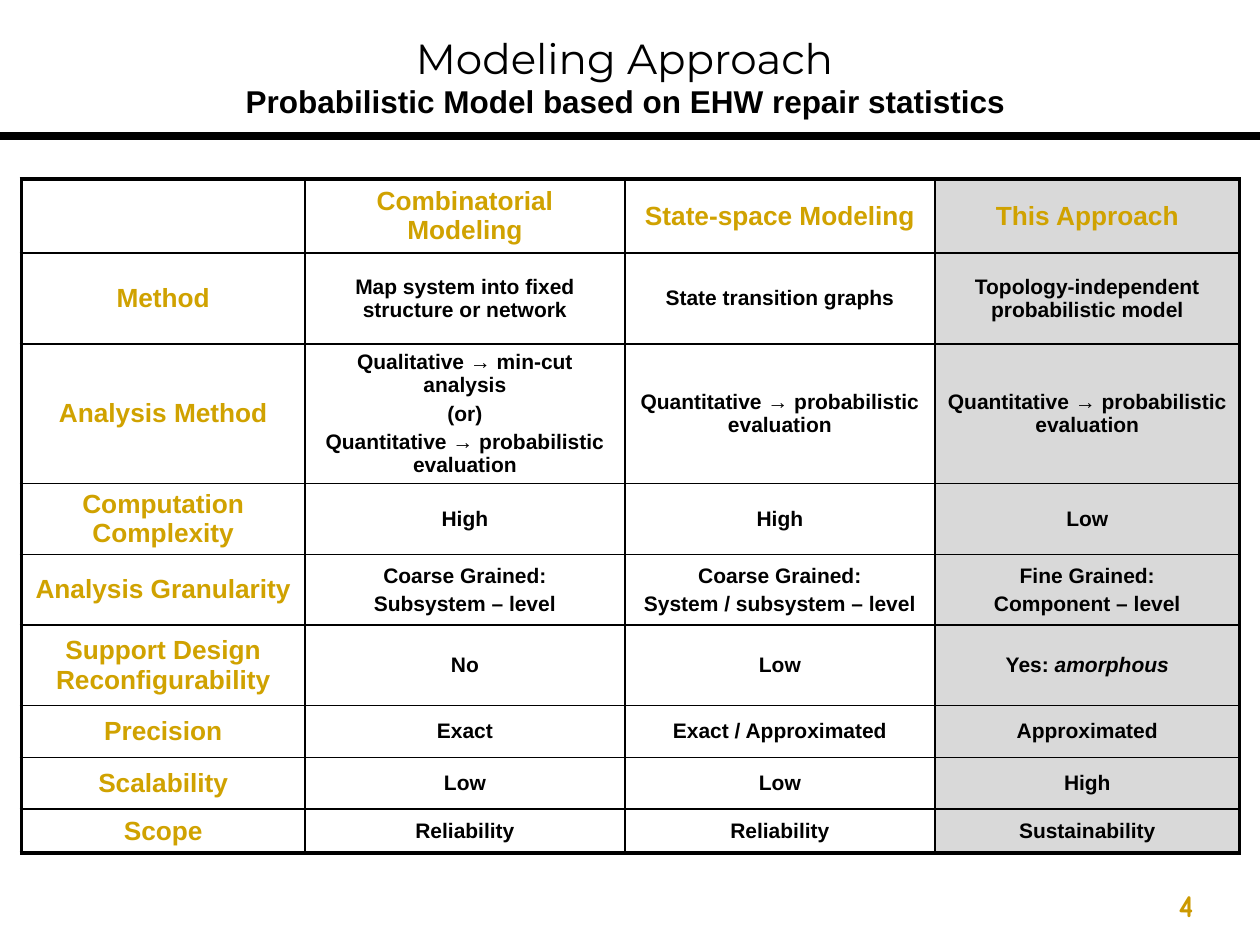
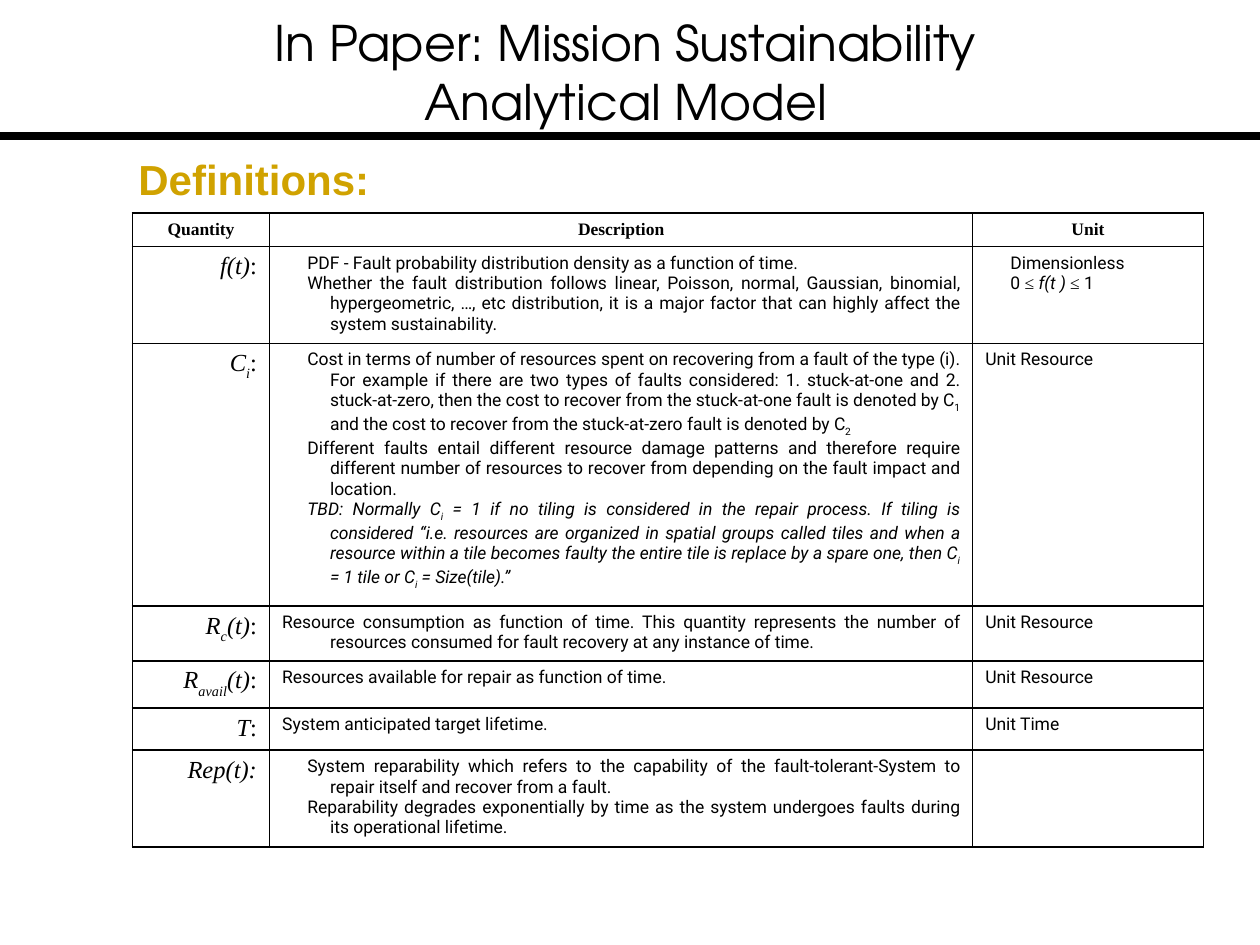
from dataclasses import dataclass, replace
from lxml.etree import SubElement
from pptx import Presentation
from pptx.dml.color import RGBColor
from pptx.enum.shapes import MSO_CONNECTOR
from pptx.enum.text import MSO_ANCHOR, MSO_AUTO_SIZE, PP_ALIGN
from pptx.oxml.ns import qn
from pptx.util import Inches, Pt

COLORS = {"ink": "000000", "gold": "D0A200", "number": "CC9900", "shade": "D9D9D9"}
SERIF = "Times New Roman"
COLUMNS, ROWS = 100, 75  # page grid
MARKS = {"*": "italic", "_": "subscript", "~": "serif"}  # toggles in cell text


@dataclass(frozen=True)
class TextStyle:
    font: str
    size: float
    color: str = "ink"
    bold: bool = False
    align: PP_ALIGN = PP_ALIGN.LEFT
    anchor: MSO_ANCHOR = MSO_ANCHOR.TOP
    gap: float = 0  # points between paragraphs
    hanging: float = 0  # inches


TITLE = TextStyle("Montserrat", 24, align=PP_ALIGN.CENTER, anchor=MSO_ANCHOR.MIDDLE)
SUBTITLE = replace(TITLE, font="Arial", size=18, bold=True)
LONG_TITLE = replace(TITLE, font="TeX Gyre Adventor", size=28)
VALUE = replace(SUBTITLE, size=12, gap=2.7)
LABEL = replace(VALUE, size=15, color="gold")
SECTION = TextStyle("Arial", 24, "gold", bold=True)
NUMBER = TextStyle("Comic Neue", 18, "number", bold=True, align=PP_ALIGN.RIGHT)
HEADER = replace(SUBTITLE, font=SERIF, size=10)
SYMBOL = TextStyle(SERIF, 14, align=PP_ALIGN.RIGHT)
UNIT = TextStyle("Roboto", 10, hanging=0.38)
DESCRIPTION = replace(UNIT, align=PP_ALIGN.JUSTIFY)


def split_spans(markup):
    """Yield (text, active marks) for each stretch between toggles."""
    active, text = set(), ""
    for letter in markup:
        if letter in MARKS:
            if text:
                yield text, set(active)
            active ^= {MARKS[letter]}
            text = ""
        else:
            text += letter
    if text:
        yield text, active


class SlideBuilder:
    def __init__(self):
        self.deck = Presentation()
        self.deck.slide_width, self.deck.slide_height = Inches(10), Inches(7.5)
        self.page = None

    def across(self, columns):
        return round(self.deck.slide_width * columns / COLUMNS)

    def down(self, rows):
        return round(self.deck.slide_height * rows / ROWS)

    def area(self, left, top, width, height):
        return self.across(left), self.down(top), self.across(width), self.down(height)

    def format_font(self, font, style):
        font.name, font.size, font.bold = style.font, Pt(style.size), style.bold
        font.color.rgb = RGBColor.from_string(COLORS[style.color])

    def fill_frame(self, frame, paragraphs, style):
        """Fill a frame with marked-up paragraphs."""
        for index, markup in enumerate(paragraphs):
            para = frame.add_paragraph() if index else frame.paragraphs[0]
            para.alignment = style.align
            if index and style.gap:
                para.space_before = Pt(style.gap)
            if style.hanging:
                # cells with several paragraphs start further in
                first_line = 0.18 if len(paragraphs) > 1 else style.hanging
                properties = para._p.get_or_add_pPr()
                properties.set("marL", str(Inches(style.hanging)))
                properties.set("indent", str(-Inches(first_line)))
            for text, marks in split_spans(markup):
                span = para.add_run()
                span.text = text
                self.format_font(span.font, style)
                span.font.italic = "italic" in marks
                if "serif" in marks:
                    span.font.name = SERIF
                if "subscript" in marks:
                    span._r.get_or_add_rPr().set("baseline", "-30000")

    def add_page(self):
        """Start a title-only page with the heavy rule under its title."""
        self.page = self.deck.slides.add_slide(self.deck.slide_layouts[5])
        height = self.down(10.8)
        rule = self.page.shapes.add_connector(
            MSO_CONNECTOR.STRAIGHT, 0, height, self.deck.slide_width, height)
        rule.line.color.rgb = RGBColor.from_string(COLORS["ink"])
        rule.line.width = Pt(4.5)
        SubElement(rule._element.spPr, qn("a:effectLst"))

    def add_title(self, text, place, *styles):
        """Give each run its style; the last style covers the rest."""
        title = self.page.shapes.title
        title.left, title.top, title.width, title.height = self.area(*place)
        frame = title.text_frame
        frame.auto_size = MSO_AUTO_SIZE.NONE
        frame.vertical_anchor = MSO_ANCHOR.MIDDLE
        frame.text = text
        para = frame.paragraphs[0]
        para.alignment = PP_ALIGN.CENTER
        for index, span in enumerate(para.runs):
            self.format_font(span.font, styles[min(index, len(styles) - 1)])

    def add_text(self, text, place, style, line_spacing=1.0):
        frame = self.page.shapes.add_textbox(*self.area(*place)).text_frame
        frame.word_wrap = True
        self.fill_frame(frame, [text], style)
        frame.paragraphs[0].line_spacing = line_spacing

    def add_border(self, cell, side, width):
        line = SubElement(cell._tc.get_or_add_tcPr(), qn(f"a:ln{side}"), w=str(Pt(width)))
        fill = SubElement(line, qn("a:solidFill"))
        SubElement(fill, qn("a:srgbClr"), val=COLORS["ink"])

    def add_table(self, left, top, widths, heights, rows, style_for, frame_width=1,
                  shaded_column=None):
        place = self.area(left, top, sum(widths), sum(heights))
        table = self.page.shapes.add_table(len(rows), len(widths), *place).table
        table.first_row = table.horz_banding = False
        for column, width in zip(table.columns, widths):
            column.width = self.across(width)
        for row, height in zip(table.rows, heights):
            row.height = self.down(height)
        for y, row in enumerate(rows):
            for x, content in enumerate(row):
                cell, style = table.cell(y, x), style_for(y, x)
                outer = {"L": x == 0, "R": x == len(widths) - 1,
                         "T": y == 0, "B": y == len(rows) - 1}
                for side, is_outer in outer.items():
                    self.add_border(cell, side, frame_width if is_outer else 1)
                if x == shaded_column:
                    cell.fill.solid()
                    cell.fill.fore_color.rgb = RGBColor.from_string(COLORS["shade"])
                else:
                    cell.fill.background()
                cell.vertical_anchor = style.anchor
                self.fill_frame(cell.text_frame, content.split("\n"), style)


PROBABILISTIC = "Quantitative → probabilistic evaluation"
APPROACHES = [
    ["", "Combinatorial Modeling", "State-space Modeling", "This Approach"],
    ["Method", "Map system into fixed structure or network", "State transition graphs",
     "Topology-independent probabilistic model"],
    ["Analysis Method", f"Qualitative → min-cut analysis\n(or)\n{PROBABILISTIC}",
     PROBABILISTIC, PROBABILISTIC],
    ["Computation Complexity", "High", "High", "Low"],
    ["Analysis Granularity", "Coarse Grained:\nSubsystem – level",
     "Coarse Grained:\nSystem / subsystem – level", "Fine Grained:\nComponent – level"],
    ["Support Design Reconfigurability", "No", "Low", "Yes: *amorphous*"],
    ["Precision", "Exact", "Exact / Approximated", "Approximated"],
    ["Scalability", "Low", "Low", "High"],
    ["Scope", "Reliability", "Reliability", "Sustainability"],
]

DEFINITIONS = [
    ["Quantity", "Description", "Unit"],
    ["*f(t)*:",
     "PDF - Fault probability distribution density as a function of time.\n"
     "Whether the fault distribution follows linear, Poisson, normal, Gaussian, binomial, "
     "hypergeometric, …, etc distribution, it is a major factor that can highly affect "
     "the system sustainability.",
     "Dimensionless\n0 ~≤ ~*f(t ) *~≤~ 1"],
    ["*C_i_*:",
     "Cost in terms of number of resources spent on recovering from a fault of the type (i). "
     "For example if there are two types of faults considered: 1. stuck-at-one and "
     "2. stuck-at-zero, then the cost to recover from the stuck-at-one fault is denoted by "
     "C_1_ and the cost to recover from the stuck-at-zero fault is denoted by C_2_\n"
     "Different faults entail different resource damage patterns and therefore require "
     "different number of resources to recover from depending on the fault impact and "
     "location.\n"
     "*TBD: Normally C_i_ = 1 if no tiling is considered in the repair process. If tiling is "
     "considered “i.e. resources are organized in spatial groups called tiles and when a "
     "resource within a tile becomes faulty the entire tile is replace by a spare one, "
     "then C_i_ = 1 tile or C_i_ = Size(tile).”*",
     "Unit Resource"],
    ["*R_c_(t)*:",
     "Resource consumption as function of time. This quantity represents the number of "
     "resources consumed for fault recovery at any instance of time.",
     "Unit Resource"],
    ["*R_avail_(t)*:", "Resources available for repair as function of time.", "Unit Resource"],
    ["*T*:", "System anticipated target lifetime.", "Unit Time"],
    ["*Rep(t):*",
     "System reparability which refers to the capability of the fault-tolerant-System to "
     "repair itself and recover from a fault.\n"
     "Reparability degrades exponentially by time as the system undergoes faults during "
     "its operational lifetime.",
     ""],
]


def approach_style(row, column):
    return LABEL if row == 0 or column == 0 else VALUE


def definition_style(row, column):
    return HEADER if row == 0 else (SYMBOL, DESCRIPTION, UNIT)[column]


def main():
    builder = SlideBuilder()

    # Comparison of modeling approaches
    builder.add_page()
    builder.add_title("Modeling Approach \vProbabilistic Model based on EHW repair statistics ",
                      (0, 1.5, 100, 9.1), TITLE, SUBTITLE)
    builder.add_table(1.7, 14.2, [22.5, 25.4, 24.6, 24.2],
                      [5.9, 7.2, 11, 5.6, 5.6, 6.4, 4.1, 4.1, 3.5],
                      APPROACHES, approach_style, frame_width=2.25, shaded_column=3)
    builder.add_text("4", (74.9, 69.8, 20.8, 5), NUMBER)

    # Definitions of the model's quantities
    builder.add_page()
    builder.add_title("In Paper: Mission Sustainability \vAnalytical Model ",
                      (9.6, 1.5, 81.2, 8.3), LONG_TITLE)
    builder.add_text("Definitions:", (10, 12.5, 85, 60.8), SECTION, line_spacing=0.8)
    builder.add_table(10.5, 16.9, [10.9, 55.8, 18.3],
                      [2.5, 7.5, 20.2, 4.2, 3.5, 3.2, 7.5],
                      DEFINITIONS, definition_style)

    builder.deck.save("out.pptx")


if __name__ == "__main__":
    main()
